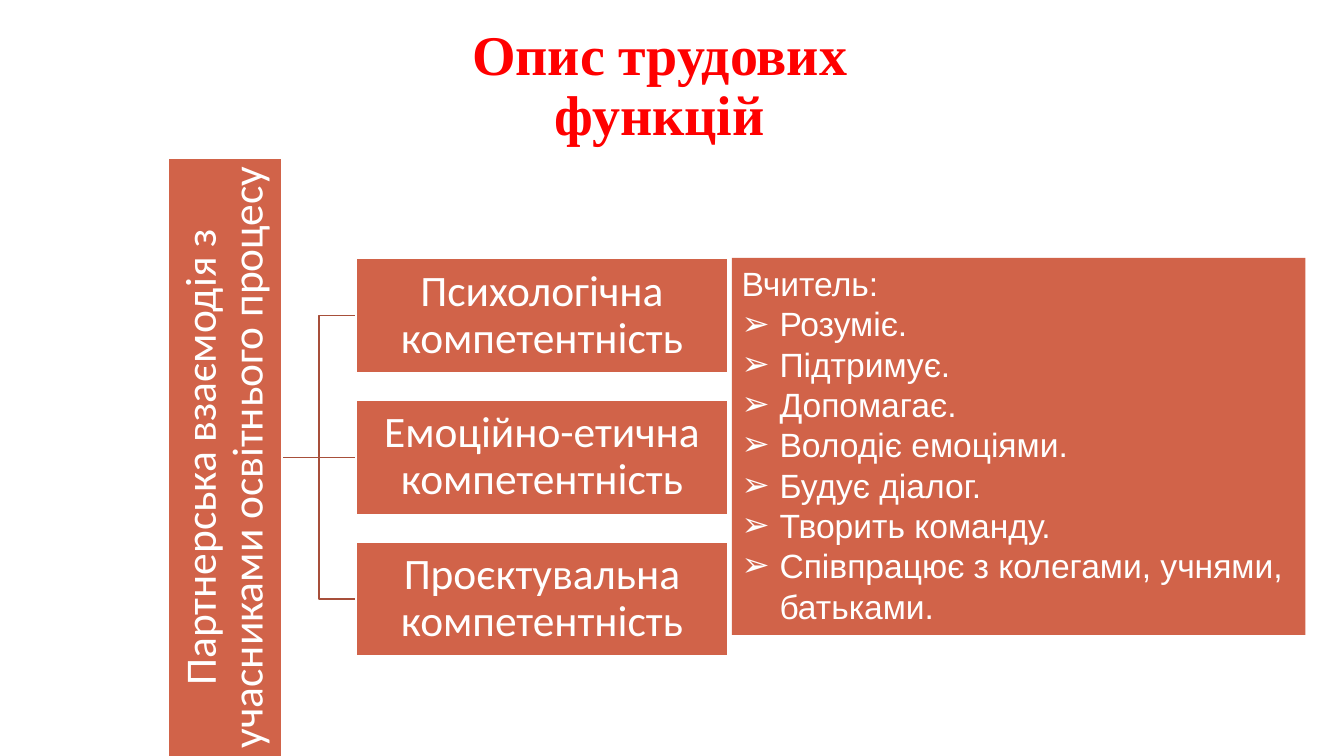
"""Build a slide on the partnership functions of a teacher."""
from lxml.etree import SubElement as Sub
from pptx import Presentation
from pptx.dml.color import RGBColor
from pptx.enum.shapes import MSO_CONNECTOR as Link, MSO_SHAPE as Form
from pptx.enum.text import MSO_ANCHOR as Anchor, MSO_AUTO_SIZE as Fit, PP_ALIGN as Align
from pptx.oxml.ns import qn
from pptx.util import Pt

RED = RGBColor(0xFF, 0, 0)
WHITE = RGBColor(0xFF, 0xFF, 0xFF)
CLAY = RGBColor(0xD1, 0x63, 0x49)
RUST = RGBColor(0xA7, 0x4F, 0x3A)

ROOT = "Партнерська взаємодія з учасниками освітнього процесу"
SKILLS = [
    "Психологічна компетентність",
    "Емоційно-етична компетентність",
    "Проєктувальна компетентність",
]
HEAD = "Вчитель:"
DUTIES = [
    "Розуміє.",
    "Підтримує.",
    "Допомагає.",
    "Володіє емоціями.",
    "Будує діалог.",
    "Творить команду.",
    "Співпрацює з колегами, учнями, батьками.",
]

MID = 326.7
HIGH = 81.3
STEP = 101.2
ROOT_X = 160.9
ROOT_W = 427
SKILL_X = 254.2
SKILL_W = 265.7


def style(para, name, size, color, bold=False):
    """Set the font of each run in a paragraph."""
    for run in para.runs:
        font = run.font
        font.name, font.size, font.bold = name, Pt(size), bold
        font.color.rgb = color


def add_title(slide, text):
    """Place and format the slide title."""
    title = slide.shapes.title
    title.left, title.top = Pt(253.4), Pt(38.2)
    title.width, title.height = Pt(435.6), Pt(48.2)
    frame = title.text_frame
    frame.text = text
    frame.word_wrap = True
    frame.auto_size = Fit.NONE
    frame.vertical_anchor = Anchor.MIDDLE
    para = frame.paragraphs[0]
    para.alignment = Align.CENTER
    para.line_spacing = 0.9
    style(para, "Times New Roman", 40, RED, True)


def add_rect(slide, left, top, width, height):
    """Add a plain clay rectangle."""
    rect = slide.shapes.add_shape(Form.RECTANGLE, Pt(left), Pt(top), Pt(width), Pt(height))
    rect.shadow.inherit = False
    rect.fill.solid()
    rect.fill.fore_color.rgb = CLAY
    rect.line.fill.background()
    rect.text_frame.word_wrap = True
    return rect


def add_node(slide, text, mid_x, mid_y, width, turn=0):
    """Add a tree node around its centre."""
    node = add_rect(slide, mid_x - width / 2, mid_y - HIGH / 2, width, HIGH)
    node.rotation = turn
    node.line.color.rgb = WHITE
    node.line.width = Pt(1)
    frame = node.text_frame
    frame.text = text
    frame.vertical_anchor = Anchor.MIDDLE
    frame.margin_left = frame.margin_right = Pt(1.5)
    frame.margin_top = frame.margin_bottom = Pt(1.5)
    para = frame.paragraphs[0]
    para.alignment = Align.CENTER
    para.line_spacing = 0.9
    style(para, "Calibri", 31, WHITE)


def add_branch(slide, end_y):
    """Join the root to a skill at the given height."""
    kind = Link.STRAIGHT if end_y == MID else Link.ELBOW
    start = ROOT_X + HIGH / 2
    line = slide.shapes.add_connector(kind, Pt(start), Pt(MID), Pt(SKILL_X), Pt(end_y))
    line.line.color.rgb = RUST
    line.line.width = Pt(1)
    Sub(line._element.spPr, qn("a:effectLst"))


def add_bullet(para):
    """Give a paragraph an arrow bullet with a hanging indent."""
    props = para._p.get_or_add_pPr()
    props.set("marL", str(Pt(27)))
    props.set("indent", str(Pt(-27)))
    Sub(props, qn("a:buFont")).set("typeface", "Arial")
    Sub(props, qn("a:buChar")).set("char", "➢")


def add_list(slide):
    """Add the panel with the duties of the teacher."""
    frame = add_rect(slide, 522.7, 184.3, 409.7, 269.3).text_frame
    frame.vertical_anchor = Anchor.TOP
    frame.text = "\n".join([HEAD, *DUTIES])
    for index, para in enumerate(frame.paragraphs):
        para.alignment = Align.LEFT
        if index:
            add_bullet(para)
        style(para, "Arial", 24, WHITE)


def main():
    """Build and save the slide."""
    deck = Presentation()
    deck.slide_width, deck.slide_height = Pt(960), Pt(540)
    slide = deck.slides.add_slide(deck.slide_layouts[5])
    add_title(slide, "Опис трудових функцій")
    rows = [MID + step * STEP for step in (-1, 0, 1)]
    for row in rows:
        add_branch(slide, row)
    add_node(slide, ROOT, ROOT_X, MID, ROOT_W, 270)
    for text, row in zip(SKILLS, rows):
        add_node(slide, text, SKILL_X + SKILL_W / 2, row, SKILL_W)
    add_list(slide)
    deck.save("out.pptx")


if __name__ == "__main__":
    main()
